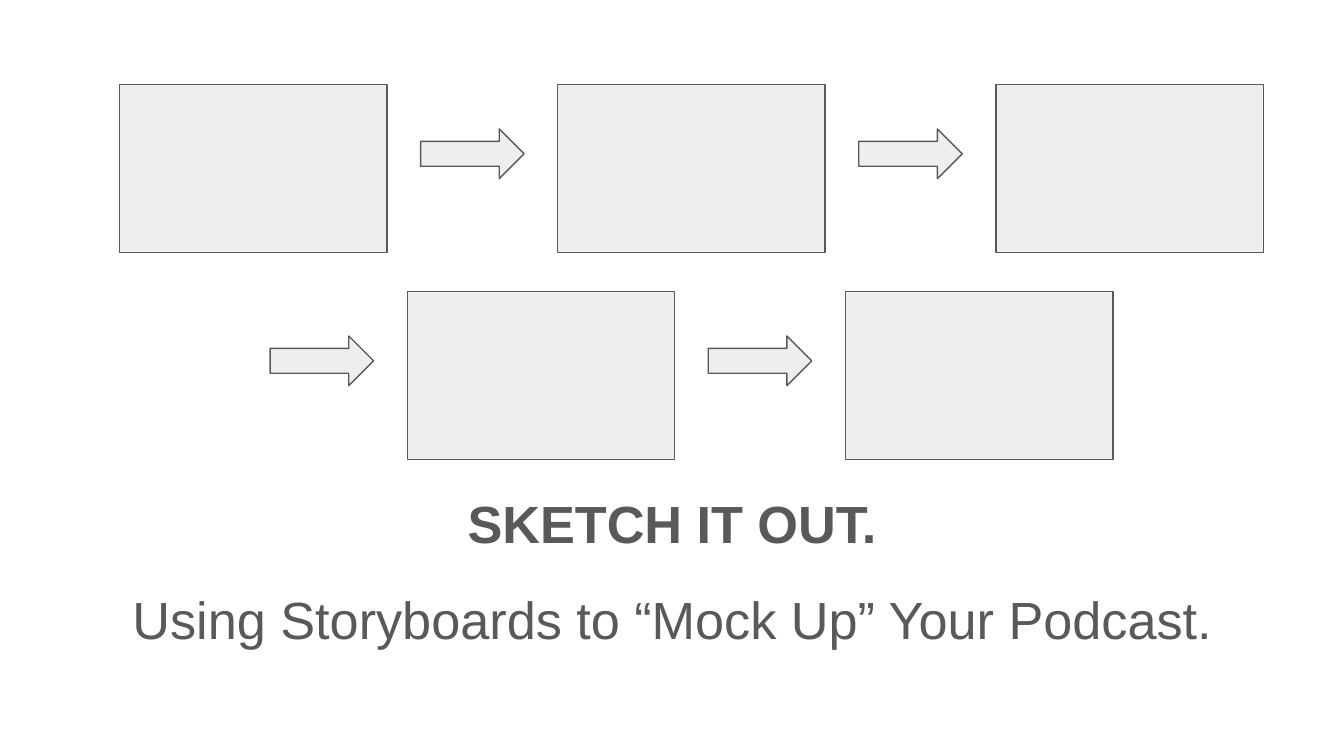
from pptx import Presentation
from pptx.dml.color import RGBColor
from pptx.enum.shapes import MSO_SHAPE
from pptx.enum.text import MSO_ANCHOR, MSO_AUTO_SIZE, PP_ALIGN
from pptx.util import Inches, Pt

GRAY = RGBColor(0x59, 0x59, 0x59)
PALE = RGBColor(0xEE, 0xEE, 0xEE)
WHITE = RGBColor(0xFF, 0xFF, 0xFF)


class Storyboard:
    font = "Arial"
    text_size = Pt(28)
    line_width = Pt(0.75)
    left, top = 0.89, 0.63
    column, row = 3.26, 1.54
    frame_size = 1.99, 1.25
    arrow_size = 0.77, 0.37
    arrow_lead, arrow_drop = 1.02, 0.33

    def __init__(self, deck):
        self.page = deck.slides.add_slide(deck.slide_layouts[0])
        self.page.background.fill.solid()
        self.page.background.fill.fore_color.rgb = WHITE

    def heading(self, box, text, top, height, anchor, bold=False):
        box.left, box.top = Inches(0.34), Inches(top)
        box.width, box.height = Inches(9.32), Inches(height)
        frame = box.text_frame
        frame.text = text
        frame.word_wrap = True
        frame.auto_size = MSO_AUTO_SIZE.NONE
        frame.vertical_anchor = anchor
        frame.margin_left = frame.margin_right = Inches(0.1)
        frame.margin_top = frame.margin_bottom = Inches(0.1)
        para = frame.paragraphs[0]
        para.alignment = PP_ALIGN.CENTER
        para.space_before = Pt(0)
        span = para.runs[0]
        span.font.name = self.font
        span.font.size = self.text_size
        span.font.bold = bold
        span.font.color.rgb = GRAY

    def outlined(self, kind, left, top, size):
        width, height = size
        shape = self.page.shapes.add_shape(
            kind, Inches(left), Inches(top), Inches(width), Inches(height))
        shape.shadow.inherit = False
        shape.fill.solid()
        shape.fill.fore_color.rgb = PALE
        shape.line.color.rgb = GRAY
        shape.line.width = self.line_width

    def panel(self, column, row):
        self.outlined(MSO_SHAPE.RECTANGLE, self.left + column * self.column,
                      self.top + row * self.row, self.frame_size)

    def arrow_before(self, column, row):
        self.outlined(MSO_SHAPE.RIGHT_ARROW,
                      self.left + column * self.column - self.arrow_lead,
                      self.top + row * self.row + self.arrow_drop,
                      self.arrow_size)


def main():
    deck = Presentation()
    deck.slide_width = Inches(10)
    deck.slide_height = deck.slide_width * 9 // 16
    board = Storyboard(deck)
    title, subtitle = board.page.placeholders
    board.heading(title, "SKETCH IT OUT.", 1.98, 2.24, MSO_ANCHOR.BOTTOM, bold=True)
    board.heading(subtitle, "Using Storyboards to “Mock Up” Your Podcast.",
                  4.27, 0.87, MSO_ANCHOR.TOP)

    indent = 2.14 / board.column
    steps = [(0, 0), (1, 0), (2, 0), (indent, 1), (indent + 1, 1)]
    for number, (column, row) in enumerate(steps):
        board.panel(column, row)
        if number:
            board.arrow_before(column, row)
    deck.save("out.pptx")


if __name__ == "__main__":
    main()
